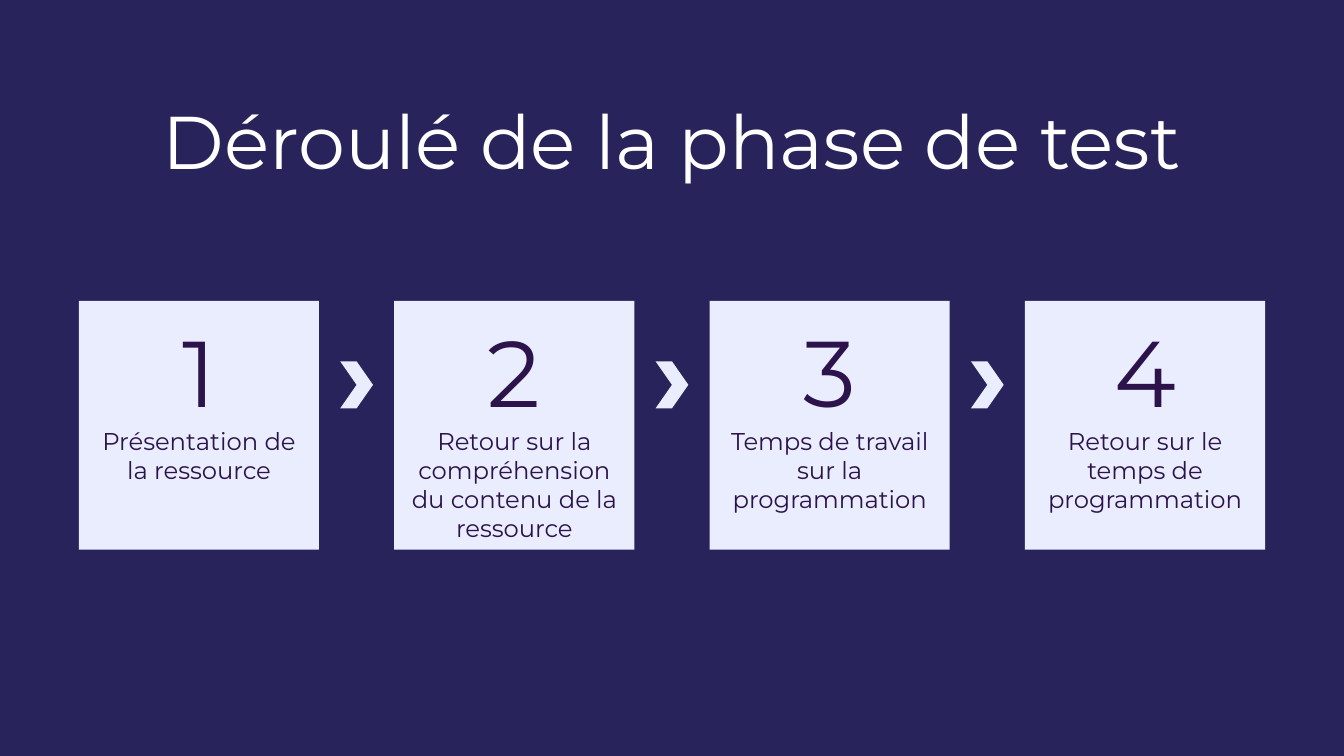
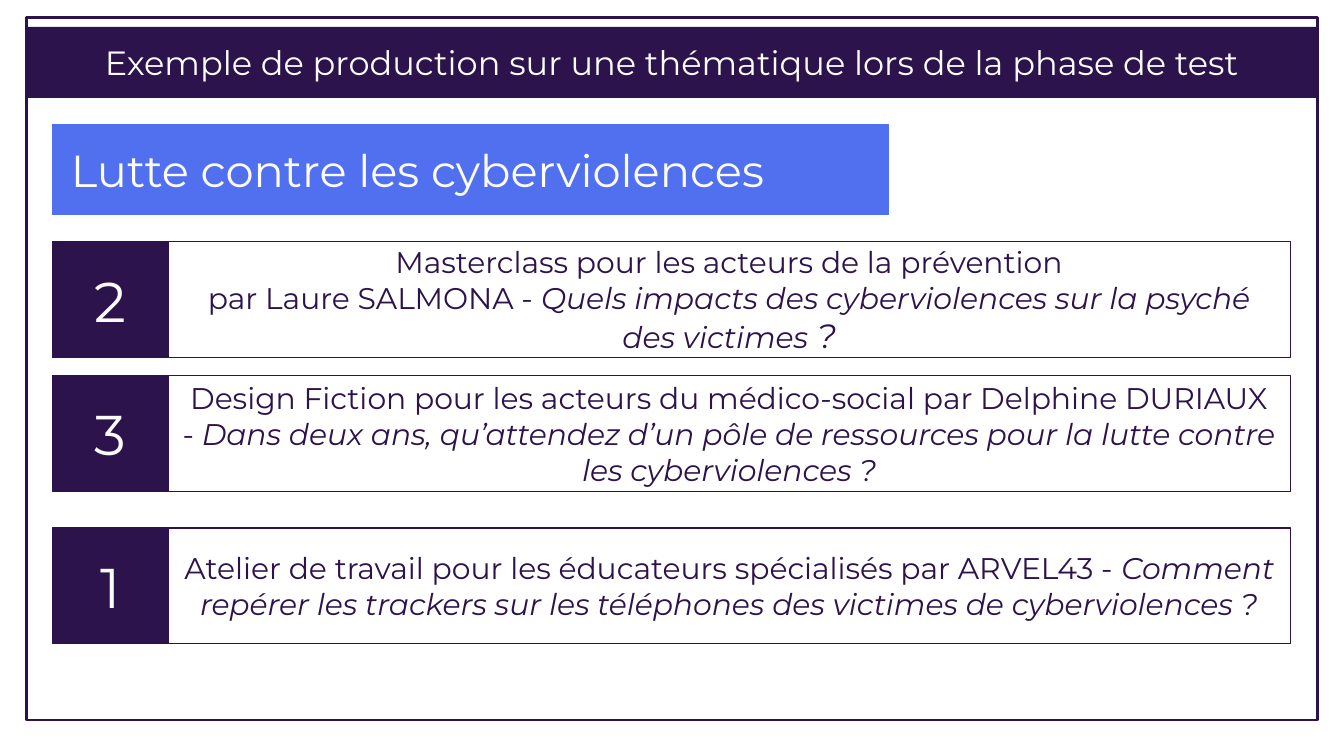
from dataclasses import dataclass

from pptx import Presentation
from pptx.dml.color import RGBColor as RGB
from pptx.enum.shapes import MSO_SHAPE as Kind
from pptx.enum.text import MSO_ANCHOR as Anchor, PP_ALIGN as Align
from pptx.util import Cm, Pt


@dataclass(frozen=True)
class Theme:
    face: str = "Montserrat"
    navy: str = "29235C"
    plum: str = "2D134B"
    pale: str = "E9EDFD"
    blue: str = "5070F0"
    snow: str = "FFFFFF"
    light: str = "FCFCFC"
    title: int = 40
    digit: int = 50
    step: int = 13
    band: int = 18
    topic: int = 24
    rank: int = 30
    body: int = 16
    mark: int = 18
    thin: float = 0.75
    thick: float = 1.5
    inset: float = 0.25


T = Theme()

# Content
TITLE = "Déroulé de la phase de test"
STEPS = [
    "Présentation de la ressource",
    "Retour sur la compréhension du contenu de la ressource",
    "Temps de travail sur la programmation",
    "Retour sur le temps de programmation",
]
BAND = "Exemple de production sur une thématique lors de la phase de test"
TOPIC = "Lutte contre les cyberviolences"
# Each row: rank, top in cm, paragraphs made of (text, italic, size) runs
ROWS = [
    ("2", 4.57, [
        [("Masterclass pour les acteurs de la prévention", False, T.body)],
        [("par Laure SALMONA - ", False, T.body),
         ("Quels impacts des cyberviolences sur la psyché des victimes",
          True, T.body),
         (" ?", True, T.mark)],
    ]),
    ("3", 7.1, [
        [("Design Fiction pour les acteurs du médico-social "
          "par Delphine DURIAUX - ", False, T.body),
         ("Dans deux ans, qu’attendez d’un pôle de ressources pour la lutte "
          "contre les cyberviolences ?", True, T.body)],
    ]),
    ("1", 9.98, [
        [("Atelier de travail pour les éducateurs spécialisés "
          "par ARVEL43 - ", False, T.body),
         ("Comment repérer les trackers sur les téléphones des victimes "
          "de cyberviolences ?", True, T.body)],
    ]),
]

# Layout in cm
WIDE, HIGH = 25.4, 14.29
CARD_X, CARD_Y, CARD_W, CARD_H, PITCH = 1.49, 5.69, 4.54, 4.7, 5.96
CHEV_Y, CHEV_W, CHEV_H = 6.83, 0.62, 0.89
EDGE, FULL = 0.5, 24.4
ROW_X, ROW_W, RANK_W = 0.99, 23.4, 2.19


def new_slide(deck, color):
    slide = deck.slides.add_slide(deck.slide_layouts[6])
    slide.background.fill.solid()
    slide.background.fill.fore_color.rgb = RGB.from_string(color)
    return slide.shapes


def add_box(shapes, x, y, w, h, fill=None, line=None, width=T.thin,
            kind=Kind.RECTANGLE):
    box = shapes.add_shape(kind, Cm(x), Cm(y), Cm(w), Cm(h))
    box.shadow.inherit = False
    if fill:
        box.fill.solid()
        box.fill.fore_color.rgb = RGB.from_string(fill)
    else:
        box.fill.background()
    if line:
        box.line.color.rgb = RGB.from_string(line)
        box.line.width = Pt(width)
    else:
        box.line.fill.background()
    return box


def set_frame(box, anchor=Anchor.MIDDLE, inset=T.inset):
    frame = box.text_frame
    frame.word_wrap = True
    frame.vertical_anchor = anchor
    frame.margin_left = frame.margin_right = Cm(inset)
    frame.margin_top = frame.margin_bottom = Cm(inset)
    return frame


def add_para(frame, size, color, align=Align.CENTER):
    para = frame.paragraphs[0]
    if para.runs:
        para = frame.add_paragraph()
    para.alignment = align
    para.font.name = T.face
    para.font.size = Pt(size)
    para.font.color.rgb = RGB.from_string(color)
    return para


def write(box, text, size, color, align=Align.CENTER, **frame):
    add_para(set_frame(box, **frame), size, color, align).add_run().text = text


def draw_steps(deck):
    shapes = new_slide(deck, T.navy)
    head = shapes.add_textbox(Cm(0), Cm(1.22), Cm(WIDE), Cm(2.84))
    write(head, TITLE, T.title, T.snow, inset=0.13)

    # Numbered cards, with a chevron centred in each gap
    for i, text in enumerate(STEPS):
        x = CARD_X + i * PITCH
        card = add_box(shapes, x, CARD_Y, CARD_W, CARD_H, T.pale)
        frame = set_frame(card, Anchor.TOP)
        add_para(frame, T.digit, T.plum).add_run().text = str(i + 1)
        add_para(frame, T.step, T.plum).add_run().text = text
        if i:
            mid = x - (PITCH - CARD_W) / 2
            add_box(shapes, mid - CHEV_W / 2, CHEV_Y, CHEV_W, CHEV_H,
                    T.pale, kind=Kind.CHEVRON)


def draw_row(shapes, rank, y, paras):
    group = shapes.add_group_shape().shapes
    body = add_box(group, ROW_X + RANK_W, y, ROW_W - RANK_W, RANK_W,
                   line=T.plum)
    frame = set_frame(body)
    for runs in paras:
        para = add_para(frame, T.body, T.plum)
        for text, slant, size in runs:
            run = para.add_run()
            run.text = text
            if slant:
                run.font.italic = True
            if size != T.body:
                run.font.size = Pt(size)
    tile = add_box(group, ROW_X, y, RANK_W, RANK_W, T.plum, T.plum)
    write(tile, rank, T.rank, T.light)


def draw_topic(deck):
    shapes = new_slide(deck, T.snow)
    # Frame and heading band
    add_box(shapes, EDGE, 0.33, FULL, 13.28, line=T.plum, width=T.thick)
    band = add_box(shapes, EDGE, 0.51, FULL, 1.34, T.plum)
    write(band, BAND, T.band, T.light)

    # Topic label and ranked rows
    topic = add_box(shapes, ROW_X, 2.36, 15.8, 1.7, T.blue, T.blue)
    write(topic, TOPIC, T.topic, T.light, Align.LEFT)
    topic.text_frame.margin_left = Cm(T.inset + 0.1)
    for row in ROWS:
        draw_row(shapes, *row)


def main():
    deck = Presentation()
    deck.slide_width, deck.slide_height = Cm(WIDE), Cm(HIGH)
    draw_steps(deck)
    draw_topic(deck)
    deck.save("out.pptx")


if __name__ == "__main__":
    main()
